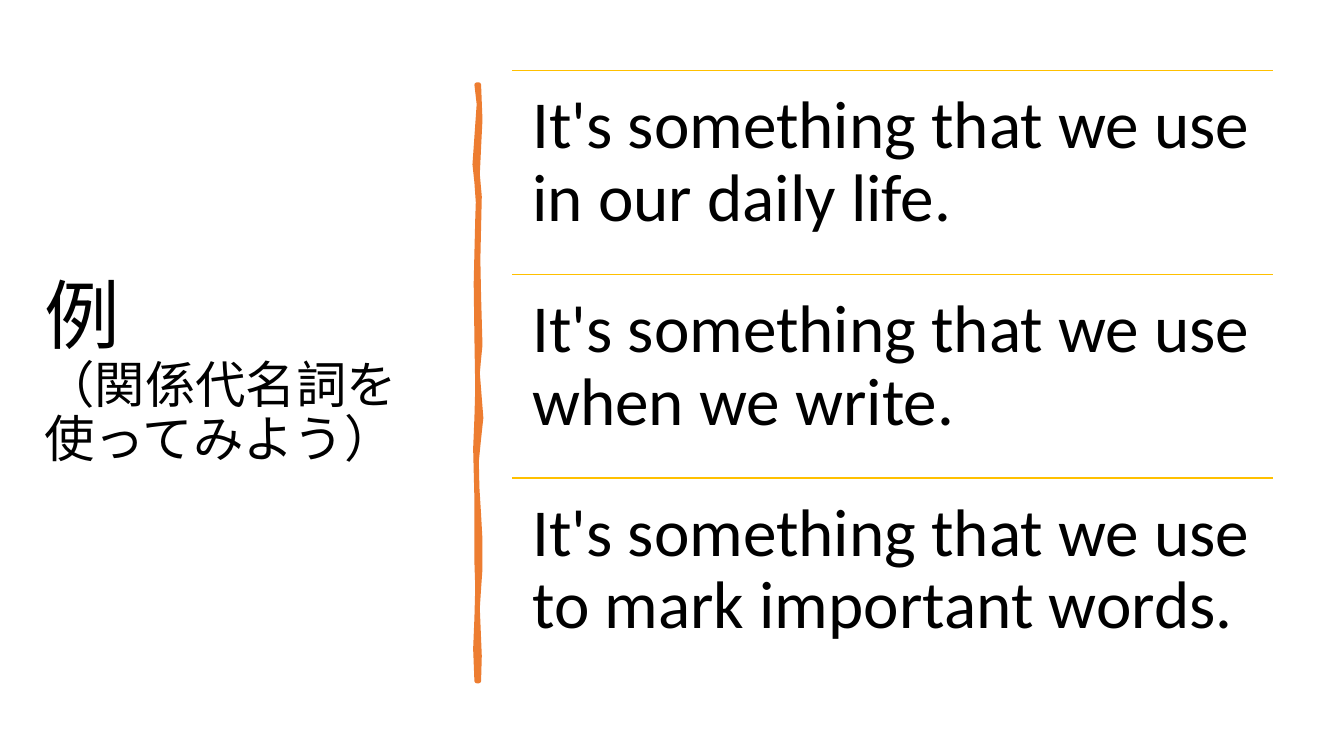
from dataclasses import dataclass

from lxml.etree import SubElement
from pptx import Presentation
from pptx.dml.color import RGBColor
from pptx.enum.shapes import MSO_CONNECTOR
from pptx.enum.text import MSO_ANCHOR, MSO_AUTO_SIZE, PP_ALIGN
from pptx.oxml.ns import qn
from pptx.util import Pt


@dataclass(frozen=True)
class Theme:
    """Colours, font and type sizes of the slide."""
    ink: RGBColor = RGBColor(0, 0, 0)
    brush: RGBColor = RGBColor(0xED, 0x7D, 0x31)
    rule: RGBColor = RGBColor(0xFF, 0xC0, 0x00)
    font: str = "Calibri"
    heading: float = 54
    subheading: float = 36
    example: float = 48


THEME = Theme()
EXAMPLES = [
    "It's something that we use in our daily life.",
    "It's something that we use when we write.",
    "It's something that we use to mark important words.",
]
BRUSH_RIGHT = [
    (0, 0), (1, 25), (0, 45), (-0.9, 64), (0.5, 80), (0, 102), (-0.5, 125),
    (0, 151), (1, 186), (0, 196), (-0.9, 206), (1.6, 238), (0, 253),
    (-1.6, 269), (-1.2, 288), (0, 307), (1, 325), (1, 346), (0, 360),
    (-0.9, 374), (0.5, 408), (0, 426),
]
BRUSH_LEFT = [
    (0, 426), (-0.9, 403), (0, 381), (0.6, 359), (0, 341), (0, 296),
    (-0.9, 260), (0, 238), (0.6, 217), (0, 181), (-0.5, 142), (0, 120),
    (0.6, 96), (1, 84), (0, 70), (-1.4, 57), (1.6, 14), (0, 0),
]


def apply(target, values):
    """Set each named attribute of the target."""
    for name, value in values.items():
        setattr(target, name, value)


def add_span(para, text, size):
    """Add one run of themed text."""
    span = para.add_run()
    span.text = text
    apply(span.font, {"name": THEME.font, "size": Pt(size)})
    span.font.color.rgb = THEME.ink


def add_title(page, left, top, width, height):
    """Place the heading and its smaller second line."""
    title = page.shapes.title
    apply(title, {"left": Pt(left), "top": Pt(top),
                  "width": Pt(width), "height": Pt(height)})
    apply(title.text_frame, {"word_wrap": True, "auto_size": MSO_AUTO_SIZE.NONE,
                             "vertical_anchor": MSO_ANCHOR.MIDDLE})
    para = title.text_frame.paragraphs[0]
    apply(para, {"alignment": PP_ALIGN.LEFT, "line_spacing": 0.9})
    add_span(para, "例", THEME.heading)
    para.add_line_break()
    add_span(para, "（関係代名詞を使ってみよう）", THEME.subheading)


def add_brush_stroke(page, left, top, width):
    """Draw the wavy vertical divider."""
    outline = [(left + width + x, top + y) for x, y in BRUSH_RIGHT]
    outline += [(left + x, top + y) for x, y in BRUSH_LEFT]
    points = [(Pt(x), Pt(y)) for x, y in outline]
    builder = page.shapes.build_freeform(*points[0])
    builder.add_line_segments(points[1:], close=True)
    stroke = builder.convert_to_shape()
    stroke.shadow.inherit = False
    stroke.fill.solid()
    stroke.fill.fore_color.rgb = THEME.brush
    stroke.line.color.rgb = THEME.brush
    stroke.line.width = Pt(3.25)


def add_example(page, text, left, top, width, height):
    """Place one sentence under its rule."""
    rule = page.shapes.add_connector(
        MSO_CONNECTOR.STRAIGHT, Pt(left), Pt(top), Pt(left + width), Pt(top))
    rule.line.color.rgb = THEME.rule
    rule.line.width = Pt(1)
    SubElement(rule._element.spPr, qn("a:effectLst"))
    box = page.shapes.add_textbox(Pt(left), Pt(top), Pt(width), Pt(height))
    inset = Pt(14.4)
    apply(box.text_frame, {
        "word_wrap": True, "vertical_anchor": MSO_ANCHOR.TOP,
        "margin_left": inset, "margin_right": inset,
        "margin_top": inset, "margin_bottom": inset})
    para = box.text_frame.paragraphs[0]
    apply(para, {"alignment": PP_ALIGN.LEFT, "line_spacing": 0.9})
    add_span(para, text, THEME.example)


def add_examples(page, left, top, width, height):
    """Stack the sentences in equal rows."""
    row = height / len(EXAMPLES)
    for index, text in enumerate(EXAMPLES):
        add_example(page, text, left, top + index * row, width, row)


def main():
    """Build and save the deck."""
    deck = Presentation()
    apply(deck, {"slide_width": Pt(960), "slide_height": Pt(540)})
    page = deck.slides.add_slide(deck.slide_layouts[5])
    add_title(page, 24.5, 46.8, 292.3, 440)
    add_brush_stroke(page, 340.5, 60.5, 1.5)
    add_examples(page, 365.8, 50.4, 543.6, 436.5)
    deck.save("out.pptx")


if __name__ == "__main__":
    main()
